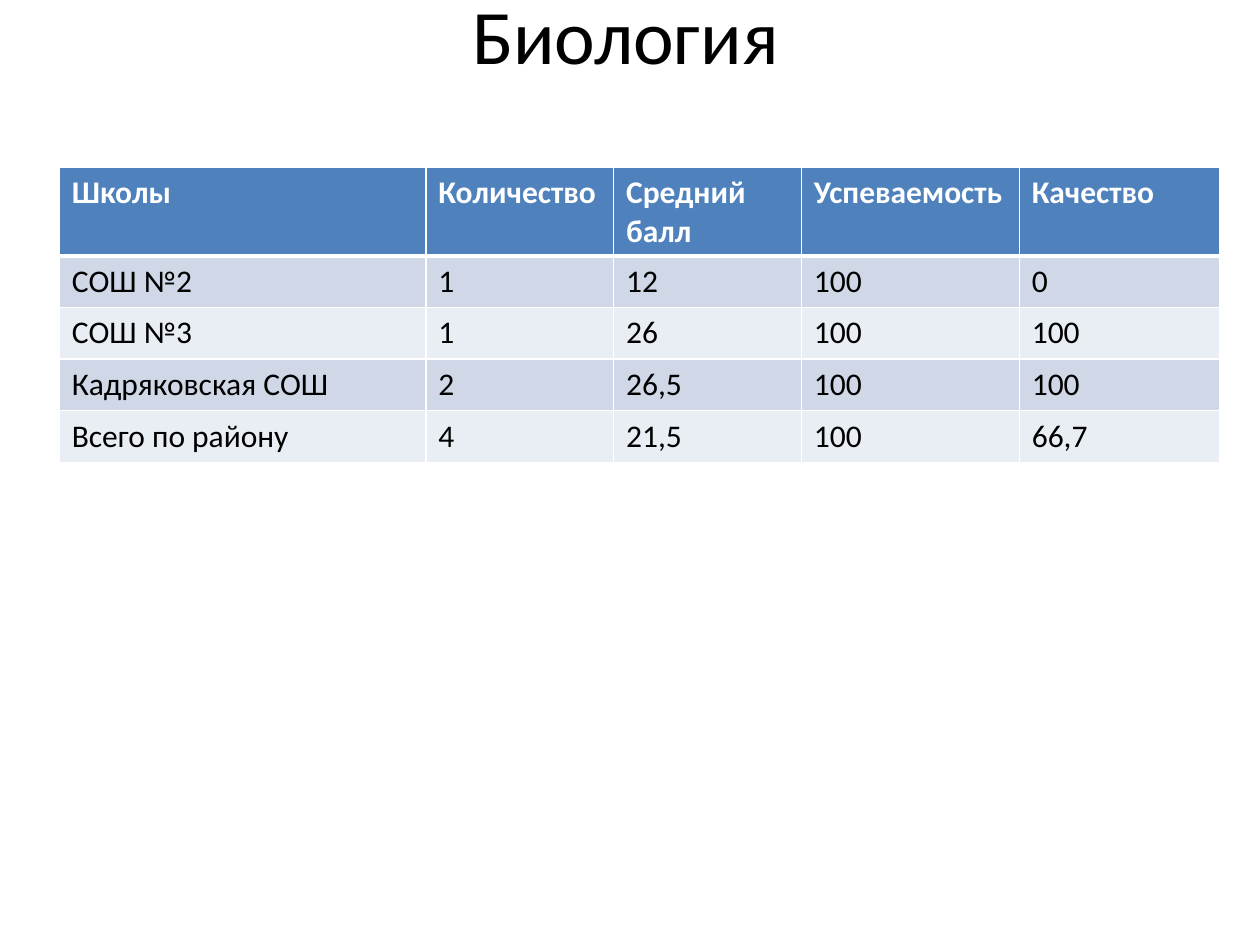
import pptx
import pptx.util
import pptx.dml.color
import pptx.enum.text
import pptx.oxml.ns
import lxml.etree
from dataclasses import dataclass

Inches = pptx.util.Inches
qn = pptx.oxml.ns.qn


@dataclass(frozen=True)
class Theme:
    font: str = "Calibri"
    title_size: int = 44
    body_size: int = 18
    black: str = "000000"
    white: str = "FFFFFF"
    header: str = "4F81BD"
    bands: tuple = ("D0D8E8", "E9EDF4")


theme = Theme()


def style_run(r, size, color, bold=False):
    r.font.name = theme.font
    r.font.size = pptx.util.Pt(size)
    r.font.bold = bold
    r.font.color.rgb = pptx.dml.color.RGBColor.from_string(color)


def add_border(cell, side, width):
    tc_pr = cell._tc.get_or_add_tcPr()
    ln = lxml.etree.SubElement(tc_pr, qn(f"a:ln{side}"), w=str(pptx.util.Pt(width)))
    fill = lxml.etree.SubElement(ln, qn("a:solidFill"))
    lxml.etree.SubElement(fill, qn("a:srgbClr"), val=theme.white)


prs = pptx.Presentation()
prs.slide_width = Inches(10)
prs.slide_height = Inches(7.5)
s = prs.slides.add_slide(prs.slide_layouts[6])

title = s.shapes.add_textbox(Inches(0.55), Inches(-0.16), Inches(8.83), Inches(0.86))
tf = title.text_frame
tf.word_wrap = True
tf.vertical_anchor = pptx.enum.text.MSO_ANCHOR.MIDDLE
tf.text = "Биология"
p = tf.paragraphs[0]
p.alignment = pptx.enum.text.PP_ALIGN.CENTER
style_run(p.runs[0], theme.title_size, theme.black)

rows = [
    ("Школы", "Количество", "Средний балл", "Успеваемость", "Качество"),
    ("СОШ №2", "1", "12", "100", "0"),
    ("СОШ №3", "1", "26", "100", "100"),
    ("Кадряковская СОШ", "2", "26,5", "100", "100"),
    ("Всего по району", "4", "21,5", "100", "66,7"),
]
col_widths = [2.91, 1.49, 1.49, 1.73, 1.59]
row_height = 0.41

table = s.shapes.add_table(
    len(rows), len(col_widths), Inches(0.47), Inches(1.33),
    Inches(sum(col_widths)), Inches(row_height * len(rows)),
).table
for column, width in zip(table.columns, col_widths):
    column.width = Inches(width)

for i, values in enumerate(rows):
    table.rows[i].height = Inches(row_height)
    is_header = i == 0
    fill_color = theme.header if is_header else theme.bands[(i - 1) % 2]
    text_color = theme.white if is_header else theme.black
    widths = {"L": 1, "R": 1, "T": 3 if i == 1 else 1, "B": 3 if is_header else 1}
    for j, value in enumerate(values):
        cell = table.cell(i, j)
        cell.text_frame.text = value
        style_run(cell.text_frame.paragraphs[0].runs[0], theme.body_size, text_color, is_header)
        for side, width in widths.items():
            add_border(cell, side, width)
        cell.fill.solid()
        cell.fill.fore_color.rgb = pptx.dml.color.RGBColor.from_string(fill_color)

prs.save("out.pptx")
